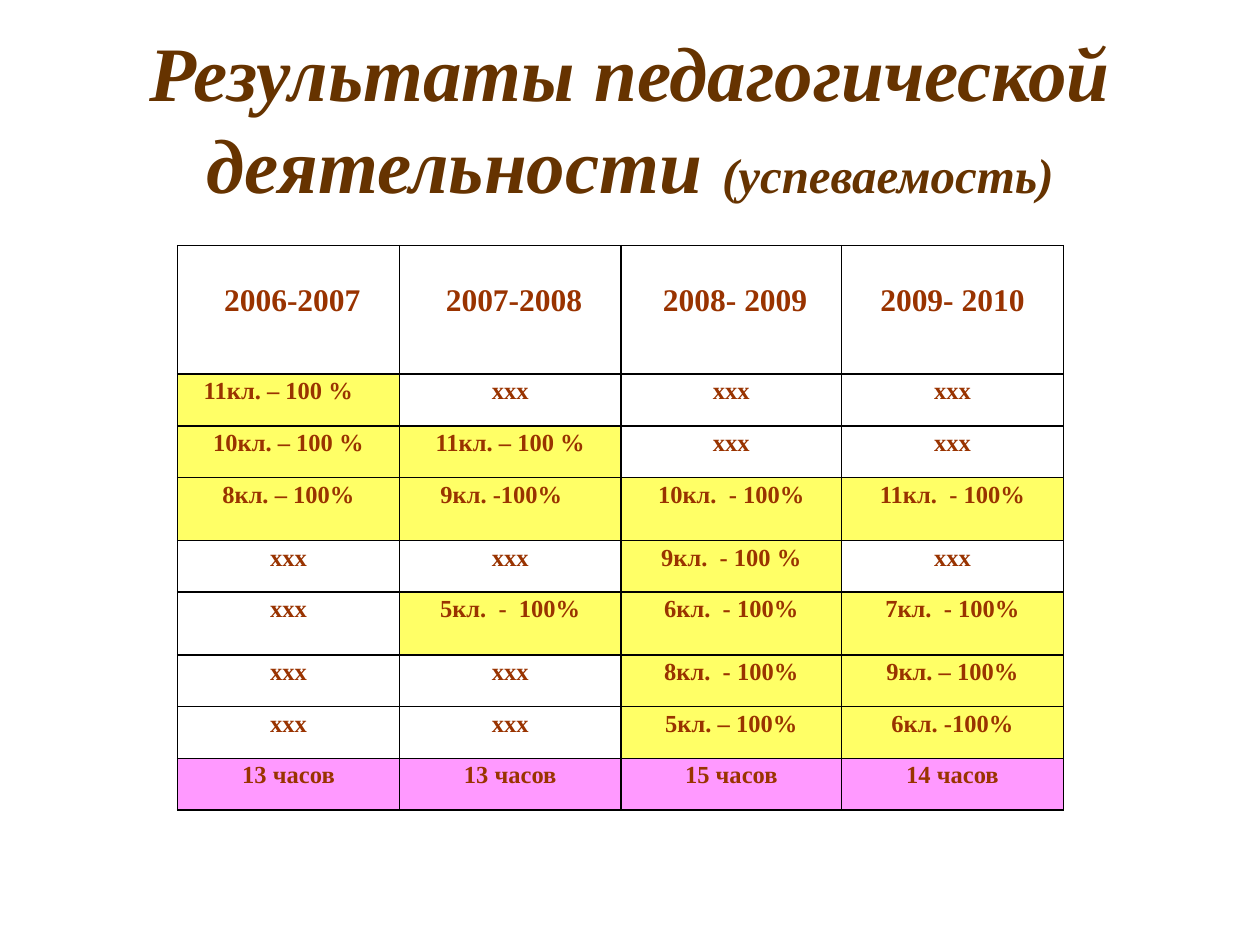
from lxml import etree
from pptx import Presentation
from pptx.dml.color import RGBColor
from pptx.enum.text import MSO_ANCHOR, MSO_AUTO_SIZE, PP_ALIGN
from pptx.oxml.ns import qn
from pptx.util import Inches, Pt

CENTER = PP_ALIGN.CENTER
TOP, MIDDLE = MSO_ANCHOR.TOP, MSO_ANCHOR.MIDDLE
NO_FIT = MSO_AUTO_SIZE.NONE
TITLE_ONLY = 5

COLORS = {
    "title": "663300",
    "text": "993300",
    "class": "FFFF66",
    "hours": "FF99FF",
    "border": "000000",
}

YEARS = ["2006-2007", "2007-2008", "2008- 2009", "2009- 2010"]
RESULTS = [
    ["11кл. – 100 %", "ххх", "ххх", "ххх"],
    ["10кл. – 100 %", "11кл. – 100 %", "ххх", "ххх"],
    ["8кл. – 100%", "9кл. -100%", "10кл.  - 100%", "11кл.  - 100%"],
    ["xxx", "ххх", "9кл.  - 100 %", "ххх"],
    ["ххх", "5кл.  -  100%", "6кл.  - 100%", "7кл.  - 100%"],
    ["ххх", "ххх", "8кл.  - 100%", "9кл. – 100%"],
    ["ххх", "ххх", "5кл. – 100%", "6кл. -100%"],
    ["13 часов", "13 часов", "15 часов", "14 часов"],
]
COLUMN_WIDTHS = [1.76, 1.76, 1.75, 1.76]
ROW_HEIGHTS = [1.02, 0.41, 0.41, 0.5, 0.41, 0.5, 0.41, 0.41, 0.41]
EXTRA_LEFT = {(0, 0): 0.06, (0, 1): 0.06, (0, 2): 0.06}
EXTRA_RIGHT = {(1, 0): 0.16, (3, 1): 0.14}


def fill_for(text):
    if "кл." in text:
        return COLORS["class"]
    if "часов" in text:
        return COLORS["hours"]
    return None


class SlideBuilder:
    font_name = "Times New Roman"

    def __init__(self, deck):
        self.page = deck.slides.add_slide(deck.slide_layouts[TITLE_ONLY])

    def style(self, font, size, color, italic=False):
        font.name = self.font_name
        font.size = Pt(size)
        font.bold = True
        font.italic = italic
        font.color.rgb = RGBColor.from_string(color)

    def title(self, spans, left, top, width, height):
        box = self.page.shapes.title
        box.left, box.top = Inches(left), Inches(top)
        box.width, box.height = Inches(width), Inches(height)
        frame = box.text_frame
        frame.word_wrap = True
        frame.auto_size = NO_FIT
        frame.vertical_anchor = MIDDLE
        para = frame.paragraphs[0]
        para.alignment = CENTER
        for text, size in spans:
            span = para.add_run()
            span.text = text
            self.style(span.font, size, COLORS["title"], italic=True)

    def borders(self, cell):
        properties = cell._tc.get_or_add_tcPr()
        for side in ("a:lnL", "a:lnR", "a:lnT", "a:lnB"):
            line = etree.SubElement(properties, qn(side), w=str(Pt(1)))
            solid = etree.SubElement(line, qn("a:solidFill"))
            etree.SubElement(solid, qn("a:srgbClr"), val=COLORS["border"])

    def cell(self, cell, text, size, top, extra_left, extra_right):
        cell.margin_left = Inches(0.07 + extra_left)
        cell.margin_right = Inches(0.07 + extra_right)
        cell.margin_top, cell.margin_bottom = Inches(top), Inches(0.03)
        cell.vertical_anchor = TOP
        para = cell.text_frame.paragraphs[0]
        para.text = text
        para.alignment = CENTER
        self.style(para.font, size, COLORS["text"])
        self.borders(cell)
        color = fill_for(text)
        if color:
            cell.fill.solid()
            cell.fill.fore_color.rgb = RGBColor.from_string(color)
        else:
            cell.fill.background()

    def table(self, rows, left, top):
        table = self.page.shapes.add_table(
            len(rows), len(COLUMN_WIDTHS), Inches(left), Inches(top),
            Inches(sum(COLUMN_WIDTHS)), Inches(sum(ROW_HEIGHTS))).table
        table.first_row = table.horz_banding = False
        for column, width in zip(table.columns, COLUMN_WIDTHS):
            column.width = Inches(width)
        for row, height in zip(table.rows, ROW_HEIGHTS):
            row.height = Inches(height)
        for r, texts in enumerate(rows):
            size, margin = (18, 0.3) if r == 0 else (14, 0.03)
            for c, text in enumerate(texts):
                self.cell(table.cell(r, c), text, size, margin,
                          EXTRA_LEFT.get((r, c), 0), EXTRA_RIGHT.get((r, c), 0))


def main():
    deck = Presentation()
    deck.slide_width, deck.slide_height = Inches(10), Inches(7.5)
    builder = SlideBuilder(deck)
    builder.title([("Результаты педагогической деятельности ", 44),
                   ("(успеваемость)", 28)], 0.5, 0.3, 9, 1.25)
    builder.table([YEARS] + RESULTS, 1.41, 1.95)
    deck.save("out.pptx")


if __name__ == "__main__":
    main()
